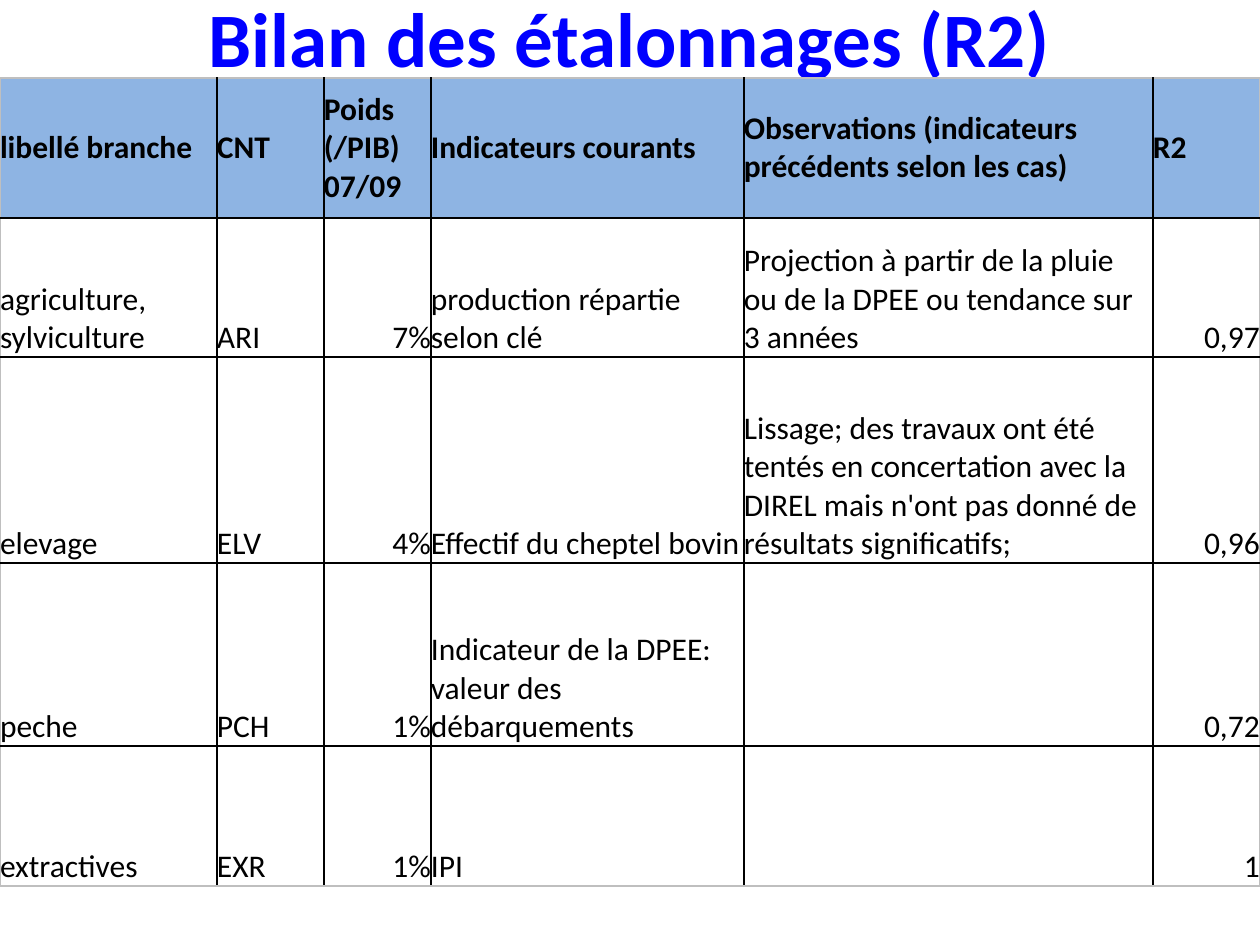
"""Build the slide that sums up the R2 of each branch calibration."""
from dataclasses import dataclass

from lxml import etree
from pptx import Presentation
from pptx import util as u
from pptx.dml import color
from pptx.enum import text
from pptx.oxml import ns

TITLE = "Bilan des étalonnages (R2)"
HEADER = ["libellé branche", "CNT", "Poids (/PIB) 07/09", "Indicateurs courants",
          "Observations (indicateurs précédents selon les cas)", "R2"]
BRANCHES = [
    ["agriculture, sylviculture", "ARI", "7%", "production répartie selon clé",
     "Projection à partir de la pluie ou de la DPEE ou tendance sur 3 années", "0,97"],
    ["elevage", "ELV", "4%", "Effectif du cheptel bovin",
     "Lissage; des travaux ont été tentés en concertation avec la DIREL "
     "mais n'ont pas donné de résultats significatifs;", "0,96"],
    ["peche", "PCH", "1%", "Indicateur de la DPEE: valeur des débarquements", "", "0,72"],
    ["extractives", "EXR", "1%", "IPI", "", "1"],
]
COLUMN_WIDTHS = [217, 107, 107, 313, 409, 107]
ROW_HEIGHTS = [140, 139, 206, 183, 140]
NUMBER_COLUMNS = {2, 5}
TABLE_TOP = 78
TITLE_BOX = (63, -42, 1134, 158)
SLIDE_SIZE = (1260, 945)


@dataclass(frozen=True)
class Theme:
    font: str = "Calibri"
    title: str = "0000FF"
    ink: str = "000000"
    header: str = "8EB4E3"
    edge: str = "BFBFBF"
    title_size: int = 44
    body_size: int = 18
    line_width: int = 1


THEME = Theme()


def px(length):
    return u.Emu(length * u.Inches(1) // 126)


def write(frame, words, *, size=THEME.body_size, ink=THEME.ink, bold=False,
          align=text.PP_ALIGN.LEFT, anchor=text.MSO_ANCHOR.MIDDLE):
    frame.word_wrap = True
    frame.vertical_anchor = anchor
    para = frame.paragraphs[0]
    para.alignment = align
    para.font.size = u.Pt(size)
    if words:
        span = para.add_run()
        span.text = words
        span.font.name = THEME.font
        span.font.size = u.Pt(size)
        span.font.bold = bold
        span.font.color.rgb = color.RGBColor.from_string(ink)


def draw_borders(cell, outer_sides):
    properties = cell._tc.get_or_add_tcPr()
    for side in "LRTB":
        line = etree.SubElement(properties, ns.qn(f"a:ln{side}"),
                                w=str(u.Pt(THEME.line_width)))
        fill = etree.SubElement(line, ns.qn("a:solidFill"))
        shade = THEME.edge if side in outer_sides else THEME.ink
        etree.SubElement(fill, ns.qn("a:srgbClr"), val=shade)


def add_branch_table(page):
    rows = [HEADER] + BRANCHES
    last_row, last_column = len(rows) - 1, len(HEADER) - 1
    table = page.shapes.add_table(
        len(rows), len(HEADER), 0, px(TABLE_TOP),
        px(sum(COLUMN_WIDTHS)), px(sum(ROW_HEIGHTS))).table
    table.horz_banding = False
    table.first_row = False
    for column, width in zip(table.columns, COLUMN_WIDTHS):
        column.width = px(width)
    for row, height in zip(table.rows, ROW_HEIGHTS):
        row.height = px(height)

    for r, values in enumerate(rows):
        for c, words in enumerate(values):
            cell = table.cell(r, c)
            cell.margin_left = cell.margin_right = 0
            cell.margin_top = cell.margin_bottom = 0
            on_edge = {"L": c == 0, "R": c == last_column,
                       "T": r == 0, "B": r == last_row}
            draw_borders(cell, [side for side, outer in on_edge.items() if outer])
            is_header = r == 0
            if is_header:
                cell.fill.solid()
                cell.fill.fore_color.rgb = color.RGBColor.from_string(THEME.header)
            else:
                cell.fill.background()
            is_number = not is_header and c in NUMBER_COLUMNS
            anchor = text.MSO_ANCHOR.MIDDLE if is_header else text.MSO_ANCHOR.BOTTOM
            write(cell.text_frame, words, bold=is_header,
                  align=text.PP_ALIGN.RIGHT if is_number else text.PP_ALIGN.LEFT)
            cell.vertical_anchor = anchor


def main():
    deck = Presentation()
    deck.slide_width, deck.slide_height = map(px, SLIDE_SIZE)
    page = deck.slides.add_slide(deck.slide_layouts[6])
    box = page.shapes.add_textbox(*map(px, TITLE_BOX))
    write(box.text_frame, TITLE, size=THEME.title_size, ink=THEME.title,
          bold=True, align=text.PP_ALIGN.CENTER)
    add_branch_table(page)
    deck.save("out.pptx")


if __name__ == "__main__":
    main()
